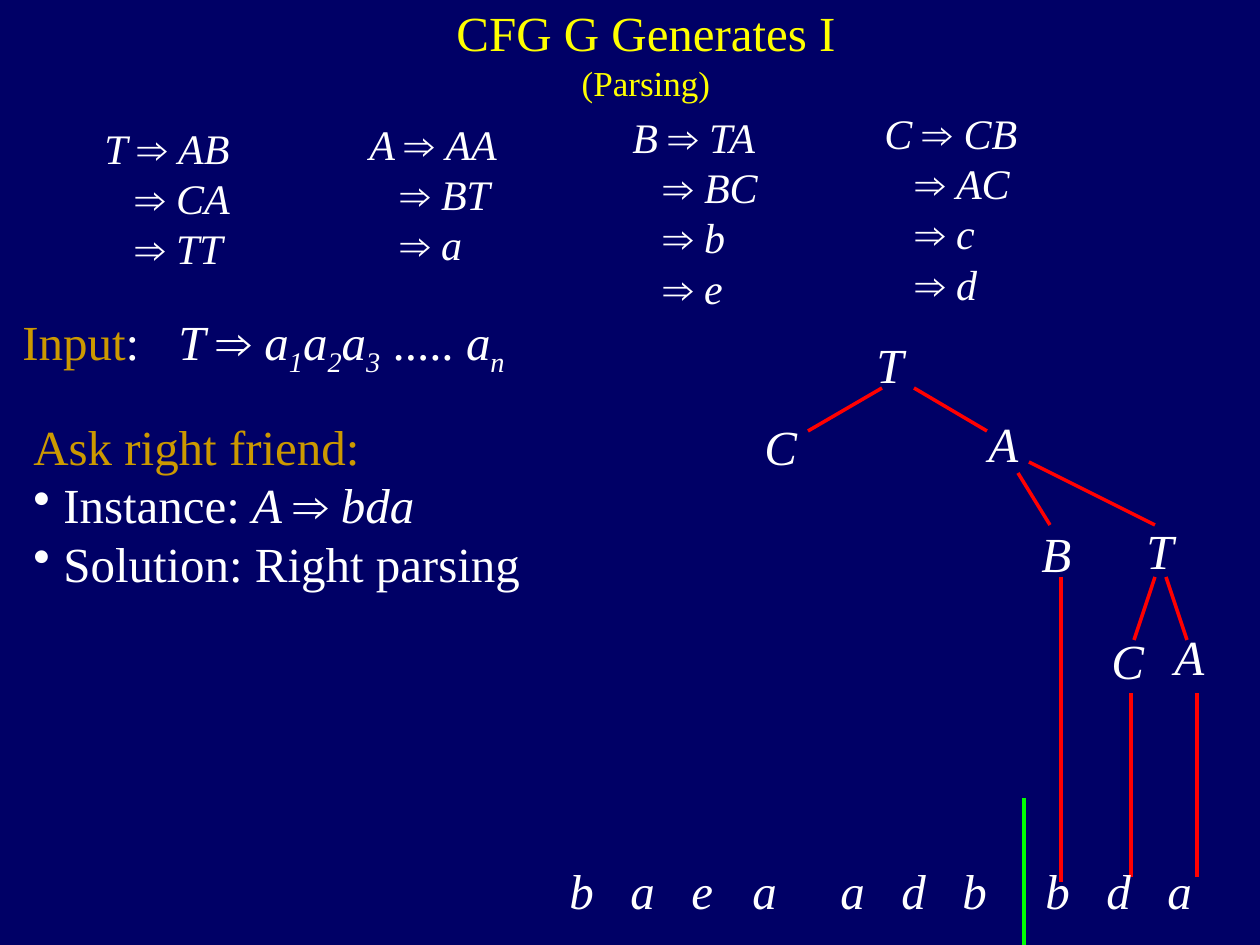
from lxml import etree
from pptx import Presentation, util as u
from pptx.dml.color import RGBColor
from pptx.enum import shapes, text
from pptx.oxml.ns import qn

NAVY = RGBColor(0x00, 0x00, 0x66)
WHITE = RGBColor(0xFF, 0xFF, 0xFF)
YELLOW = RGBColor(0xFF, 0xFF, 0x00)
GOLD = RGBColor(0xCC, 0x99, 0x00)
RED = RGBColor(0xFF, 0x00, 0x00)
GREEN = RGBColor(0x00, 0xFF, 0x00)
FONT = "Times New Roman"
LINE_HEIGHT = 80
LETTER_PITCH = 61


def px(length):
    return u.Emu(round(length * 914400 / 126))


def add_run(paragraph, words, size=28, color=WHITE, italic=False, subscript=False):
    run = paragraph.add_run()
    run.text = words
    font = run.font
    font.name, font.size, font.italic = FONT, u.Pt(size), italic
    font.color.rgb = color
    if subscript:
        run._r.get_or_add_rPr().set("baseline", "-25000")


def add_frame(slide, left, top, width, height):
    frame = slide.shapes.add_textbox(px(left), px(top), px(width), px(height)).text_frame
    frame.word_wrap = True
    return frame


def add_line(slide, start, end, color):
    line = slide.shapes.add_connector(
        shapes.MSO_CONNECTOR.STRAIGHT, *(px(value) for value in (*start, *end)))
    line.line.color.rgb = color
    line.line.width = u.Pt(2)
    etree.SubElement(line._element.spPr, qn("a:effectLst"))


def set_indent(paragraph, margin, hanging=0, bullet=None):
    properties = paragraph._p.get_or_add_pPr()
    properties.set("marL", str(px(margin)))
    properties.set("indent", str(-px(hanging)))
    if bullet:
        etree.SubElement(properties, qn("a:buChar")).set("char", bullet)


def add_title(slide, left, top, width, height):
    title = slide.shapes.title
    title.left, title.top, title.width, title.height = map(px, (left, top, width, height))
    frame = title.text_frame
    frame.auto_size = text.MSO_AUTO_SIZE.NONE
    frame.vertical_anchor = text.MSO_ANCHOR.TOP
    add_run(frame.paragraphs[0], "CFG G Generates I", color=YELLOW)
    add_run(frame.add_paragraph(), "(Parsing)", size=20, color=YELLOW)
    for paragraph in frame.paragraphs:
        paragraph.alignment = text.PP_ALIGN.CENTER


def add_rule(slide, left, top, symbol, products):
    """List the productions of one grammar symbol."""
    frame = add_frame(slide, left, top, 262, 13 + 50 * len(products))
    for index, product in enumerate(products):
        if index == 0:
            paragraph = frame.paragraphs[0]
            add_run(paragraph, symbol + " ", size=24, italic=True)
        else:
            paragraph = frame.add_paragraph()
            set_indent(paragraph, 31)
        add_run(paragraph, "⇒ ", size=24)
        add_run(paragraph, product, size=24, italic=True)


def add_input(slide, left, top):
    label = add_frame(slide, left, top, 172, LINE_HEIGHT).paragraphs[0]
    add_run(label, "Input", color=GOLD)
    add_run(label, ":")
    formula = add_frame(slide, left + 156, top, 450, LINE_HEIGHT).paragraphs[0]
    add_run(formula, "T ", italic=True)
    add_run(formula, "⇒ ")
    for index in "123n":
        if index == "n":
            add_run(formula, " ..... ")
        add_run(formula, "a", italic=True)
        add_run(formula, index, italic=True, subscript=True)


def add_question(slide, left, top, width, height):
    frame = add_frame(slide, left, top, width, height)
    add_run(frame.paragraphs[0], "Ask right friend:", color=GOLD)
    instance, solution = frame.add_paragraph(), frame.add_paragraph()
    for paragraph in (instance, solution):
        set_indent(paragraph, 30, hanging=30, bullet="•")
    add_run(instance, "Instance: ")
    add_run(instance, "A ", italic=True)
    add_run(instance, "⇒ ")
    add_run(instance, "bda", italic=True)
    add_run(solution, "Solution: Right parsing")


def add_tree(slide, left, top):
    edges = [
        ((132, 68), (58, 111)), ((164, 68), (237, 111)),
        ((268, 153), (300, 205)), ((279, 142), (405, 205)),
        ((405, 257), (384, 320)), ((416, 257), (437, 320)),
        ((311, 257), (311, 562)), ((381, 373), (381, 557)), ((447, 373), (447, 557)),
    ]
    nodes = [
        ("T", 114, 8), ("C", 2, 90), ("A", 226, 87), ("B", 279, 197),
        ("T", 384, 194), ("C", 349, 304), ("A", 412, 300),
    ]
    for start, end in edges:
        add_line(slide, (left + start[0], top + start[1]),
                 (left + end[0], top + end[1]), RED)
    for symbol, x, y in nodes:
        frame = add_frame(slide, left + x, top + y, 64, LINE_HEIGHT)
        add_run(frame.paragraphs[0], symbol, italic=True)


def add_leaves(slide, left, top, letters):
    """Write terminal letters at equal tab stops."""
    frame = add_frame(slide, left, top, 25 + LETTER_PITCH * len(letters), LINE_HEIGHT)
    paragraph = frame.paragraphs[0]
    tabs = etree.SubElement(paragraph._p.get_or_add_pPr(), qn("a:tabLst"))
    for index in range(1, len(letters)):
        tab = etree.SubElement(tabs, qn("a:tab"))
        tab.set("pos", str(px(index * LETTER_PITCH)))
        tab.set("algn", "l")
    add_run(paragraph, "\t".join(letters), italic=True)


def main():
    presentation = Presentation()
    presentation.slide_width, presentation.slide_height = px(1260), px(945)
    slide = presentation.slides.add_slide(presentation.slide_layouts[5])
    slide.background.fill.solid()
    slide.background.fill.fore_color.rgb = NAVY

    add_title(slide, 416, -4, 460, 115)
    for left, top, symbol, products in [
        (92, 116, "T", ["AB", "CA", "TT"]),
        (357, 112, "A", ["AA", "BT", "a"]),
        (620, 105, "B", ["TA", "BC", "b", "e"]),
        (872, 101, "C", ["CB", "AC", "c", "d"]),
    ]:
        add_rule(slide, left, top, symbol, products)
    add_input(slide, 10, 305)
    add_question(slide, 21, 410, 568, 214)
    add_tree(slide, 750, 320)
    for left, letters in [(557, "baea"), (828, "adb"), (1033, "bda")]:
        add_leaves(slide, left, 854, letters)
    add_line(slide, (1024, 945), (1024, 798), GREEN)
    presentation.save("out.pptx")


if __name__ == "__main__":
    main()
